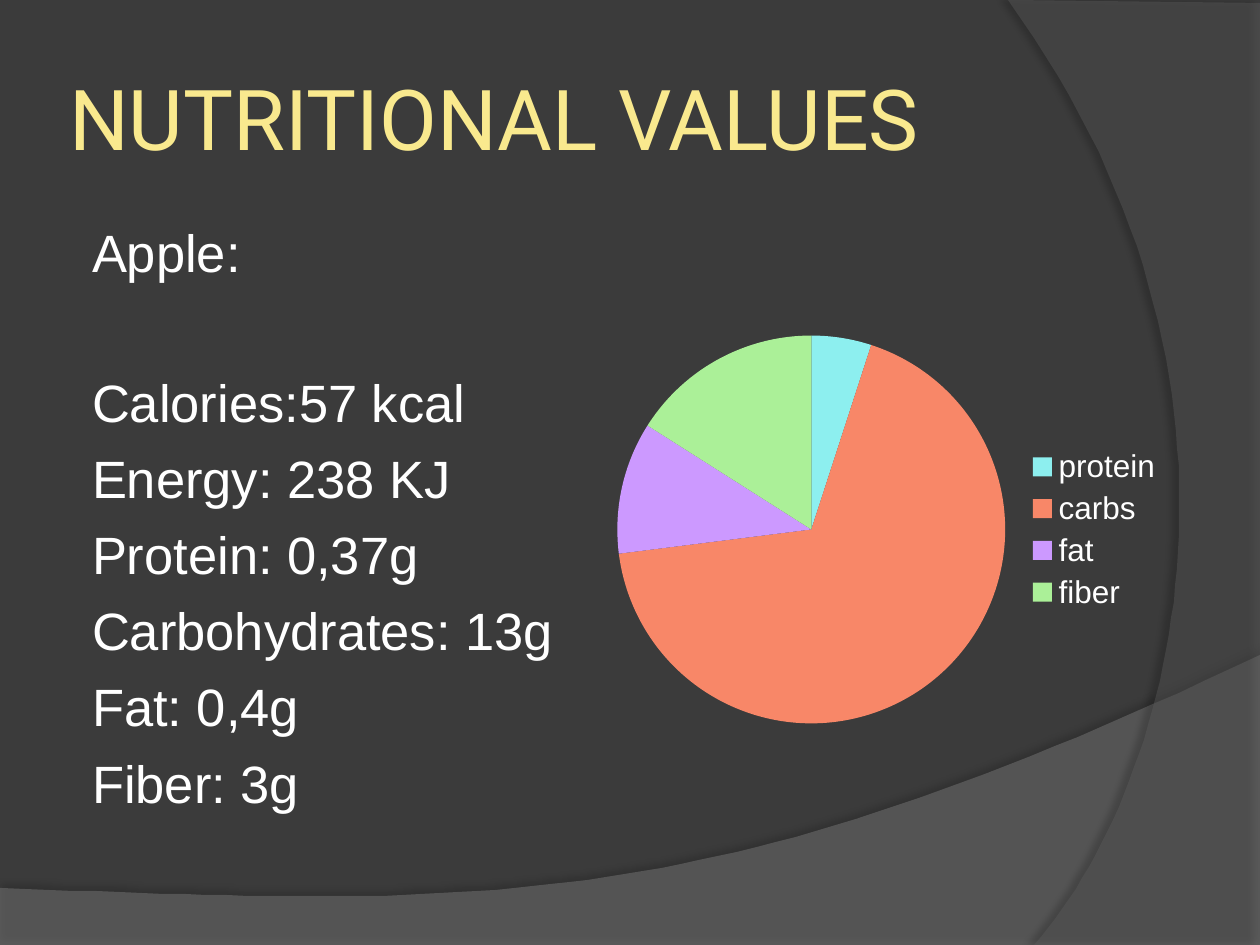
from lxml.etree import SubElement
from pptx import Presentation
from pptx.chart.data import CategoryChartData
from pptx.dml.color import RGBColor
from pptx.enum.chart import XL_CHART_TYPE as ChartType, XL_LEGEND_POSITION as LegendPosition
from pptx.enum.text import MSO_ANCHOR as Anchor
from pptx.oxml.ns import qn
from pptx.util import Pt

PX = 914400 / 126
COLORS = {
    "background": "3B3B3B", "wave": "7F7F7F", "arc": "5E5E5E", "shadow": "000000",
    "title": "F9E98E", "text": "FFFFFF",
}
SLICES = {
    "protein": (5, "8DEFEF"),
    "carbs": (68, "F88768"),
    "fat": (11, "CC99FF"),
    "fiber": (16, "ABF098"),
}
FACTS = [
    "Apple:", "Calories:57 kcal", "Energy: 238 KJ", "Protein: 0,37g",
    "Carbohydrates: 13g", "Fat: 0,4g", "Fiber: 3g",
]
TITLE_FONT = {"name": "Roboto", "size": Pt(48)}
BODY_FONT = {"name": "Arial", "size": Pt(30)}
LEGEND_FONT = {"name": "Arial", "size": Pt(18)}
BODY_GAPS = [3, 49.5] + [7.5] * 5


def px(*lengths):
    return [round(length * PX) for length in lengths]


def rgb(name):
    return RGBColor.from_string(COLORS.get(name, name))


def set_font(font, values, color):
    for key, value in values.items():
        setattr(font, key, value)
    font.color.rgb = rgb(color)


def paint(fill, color):
    fill.solid()
    fill.fore_color.rgb = rgb(color)


def add_alpha(color_element, percent):
    SubElement(color_element, qn("a:alpha"), val=str(percent * 1000))


def curve(start, first, second, end, steps=60):
    points = []
    for step in range(steps + 1):
        t = step / steps
        weights = ((1 - t) ** 3, 3 * t * (1 - t) ** 2, 3 * t * t * (1 - t), t ** 3)
        points.append(tuple(
            sum(w * p for w, p in zip(weights, axis))
            for axis in zip(start, first, second, end)
        ))
    return points


def add_swoosh(page, points, color, alpha, shadow_alpha, distance, direction):
    builder = page.shapes.build_freeform(*points[0], scale=PX)
    builder.add_line_segments(points[1:], close=True)
    swoosh = builder.convert_to_shape()
    paint(swoosh.fill, color)
    swoosh.line.fill.background()
    properties = swoosh._element.spPr
    add_alpha(properties.find(".//" + qn("a:srgbClr")), alpha)
    effects = SubElement(properties, qn("a:effectLst"))
    shadow = SubElement(
        effects, qn("a:outerShdw"), blurRad=str(Pt(4)), dist=str(Pt(distance)),
        dir=str(direction * 60000), algn="ctr", rotWithShape="0",
    )
    add_alpha(SubElement(shadow, qn("a:srgbClr"), val=COLORS["shadow"]), shadow_alpha)


def add_text(page, bounds, lines, font, color, gaps, **frame_values):
    frame = page.shapes.add_textbox(*px(*bounds)).text_frame
    for key, value in {"word_wrap": True, **frame_values}.items():
        setattr(frame, key, value)
    for index, (line, gap) in enumerate(zip(lines, gaps)):
        para = frame.add_paragraph() if index else frame.paragraphs[0]
        para.space_before = Pt(gap)
        span = para.add_run()
        span.text = line
        set_font(span.font, font, color)


def add_pie(page, bounds):
    data = CategoryChartData()
    data.categories = list(SLICES)
    data.add_series("Series 1", [value for value, _ in SLICES.values()])
    chart = page.shapes.add_chart(ChartType.PIE, *px(*bounds), data).chart
    chart.has_title = False
    chart.has_legend = True
    chart.legend.position = LegendPosition.RIGHT
    chart.legend.include_in_layout = False
    set_font(chart.font, LEGEND_FONT, "text")
    plot = chart.plots[0]
    plot.vary_by_categories = True
    for index, (_, color) in enumerate(SLICES.values()):
        part = plot.series[0].points[index].format
        paint(part.fill, color)
        part.line.fill.background()


def main():
    deck = Presentation()
    deck.slide_width, deck.slide_height = px(1260, 945)
    page = deck.slides.add_slide(deck.slide_layouts[6])
    paint(page.background.fill, "background")

    wave = [(0, 945), (1260, 945)] + curve((1260, 655), (704, 919), (493, 906), (0, 888))
    arc = [(1260, 3), (1260, 945)] + curve((1034, 945), (1178, 780), (1283, 378), (1008, 0))
    add_swoosh(page, wave, "wave", 45, 35, 3.5, 270)
    add_swoosh(page, arc, "arc", 40, 45, 4, 180)

    inset = px(6)[0]
    margins = {f"margin_{side}": inset for side in ("left", "right", "top", "bottom")}
    add_text(page, (63, 38, 1029, 157), ["NUTRITIONAL VALUES"], TITLE_FONT, "title", [0],
             vertical_anchor=Anchor.MIDDLE, **margins)
    add_text(page, (74, 214, 1029, 624), FACTS, BODY_FONT, "text", BODY_GAPS,
             margin_left=px(18)[0])
    add_pie(page, (600, 294, 576, 471))
    deck.save("out.pptx")


if __name__ == "__main__":
    main()
